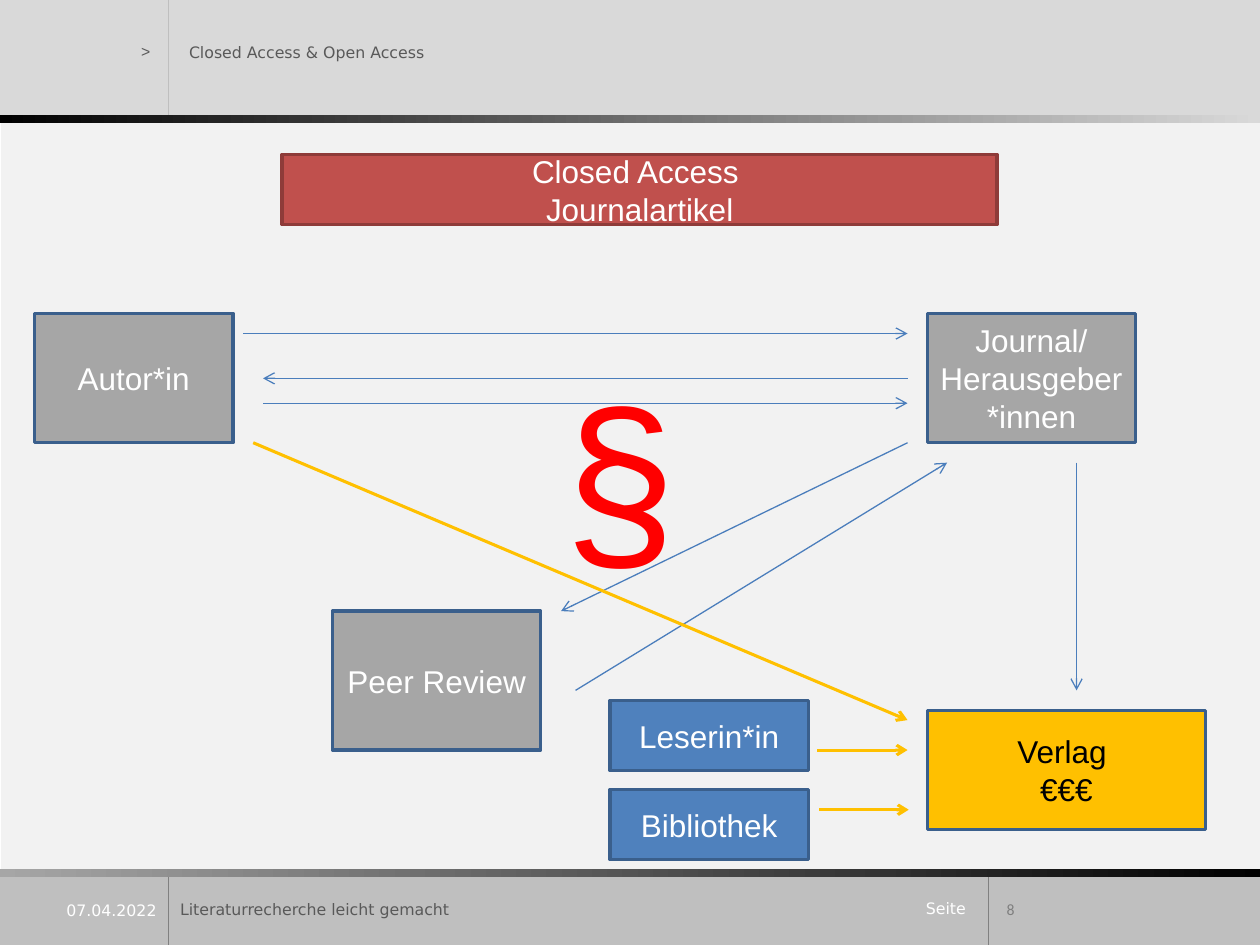
from lxml import etree
from pptx import Presentation
from pptx.dml.color import RGBColor
from pptx.enum.shapes import MSO_CONNECTOR, MSO_SHAPE
from pptx.enum.text import MSO_ANCHOR, MSO_AUTO_SIZE, PP_ALIGN
from pptx.oxml.ns import qn
from pptx.util import Pt

RECTANGLE = MSO_SHAPE.RECTANGLE
STRAIGHT = MSO_CONNECTOR.STRAIGHT
TOP, MIDDLE = MSO_ANCHOR.TOP, MSO_ANCHOR.MIDDLE
LEFT, CENTER, RIGHT = PP_ALIGN.LEFT, PP_ALIGN.CENTER, PP_ALIGN.RIGHT
NO_AUTOFIT = MSO_AUTO_SIZE.NONE

WIDTH, HEIGHT = 720, 540


def color(value):
    return RGBColor.from_string(value)


def points(*lengths):
    return [Pt(length) for length in lengths]


def set_text(shape, text, *, size, font, fill, align=LEFT, anchor=TOP, bullet=None, indent=0):
    """Write one paragraph per line of text; a vertical tab is a line break."""
    frame = shape.text_frame
    frame.word_wrap = True
    frame.auto_size = NO_AUTOFIT
    frame.vertical_anchor = anchor
    for number, line in enumerate(text.split("\n")):
        paragraph = frame.add_paragraph() if number else frame.paragraphs[0]
        paragraph.text = line
        paragraph.alignment = align
        if bullet:
            paragraph.space_before = Pt(0)
            properties = paragraph._p.get_or_add_pPr()
            properties.set("marL", str(Pt(indent)))
            properties.set("indent", str(-Pt(indent)))
            etree.SubElement(properties, qn("a:buChar")).set("char", bullet)
        for run in paragraph.runs:
            run.font.size = Pt(size)
            run.font.name = font
            run.font.color.rgb = color(fill)


class FlowSlide:
    box_font, box_size = "Arial", 18
    frame_font, frame_size = "DejaVu Sans", 9
    box_border, border_width = "3A5F8C", 2

    def __init__(self, presentation):
        self.slide = presentation.slides.add_slide(presentation.slide_layouts[1])
        self.shapes = self.slide.shapes

    def panel(self, left, top, width, height, fill):
        """A borderless band; a pair of colours gives a left-to-right gradient."""
        shape = self.shapes.add_shape(RECTANGLE, *points(left, top, width, height))
        shape.shadow.inherit = False
        shape.line.fill.background()
        if isinstance(fill, str):
            shape.fill.solid()
            shape.fill.fore_color.rgb = color(fill)
        else:
            shape.fill.gradient()
            shape.fill.gradient_angle = 0
            for position, (stop, value) in enumerate(zip(shape.fill.gradient_stops, fill)):
                stop.color.rgb = color(value)
                stop.position = position
        return shape

    def box(self, text, left, top, width, height, fill, border=box_border, text_color="FFFFFF"):
        shape = self.panel(left, top, width, height, fill)
        shape.line.color.rgb = color(border)
        shape.line.width = Pt(self.border_width)
        set_text(shape, text, size=self.box_size, font=self.box_font, fill=text_color,
                 align=CENTER, anchor=MIDDLE)

    def line(self, start, end, stroke, width, arrow=False):
        connector = self.shapes.add_connector(STRAIGHT, *points(*start, *end))
        connector.line.color.rgb = color(stroke)
        connector.line.width = Pt(width)
        if arrow:
            etree.SubElement(connector.line._get_or_add_ln(), qn("a:tailEnd")).set("type", "arrow")
        etree.SubElement(connector._element.spPr, qn("a:effectLst"))

    def label(self, text, left, top, width, height, fill, size=frame_size, font=frame_font, **style):
        shape = self.shapes.add_textbox(*points(left, top, width, height))
        set_text(shape, text, size=size, font=font, fill=fill, **style)

    def heading(self, text, left, top, width, height, fill):
        title, body = self.shapes.title, self.slide.placeholders[1]
        tree = body.element.getparent()
        tree.remove(title.element)
        tree.append(body.element)  # in front of the header band
        body.left, body.top, body.width, body.height = points(left, top, width, height)
        set_text(body, text, size=self.frame_size, font=self.frame_font, fill=fill,
                 bullet=">", indent=27.4)


def main():
    presentation = Presentation()
    presentation.slide_width, presentation.slide_height = points(WIDTH, HEIGHT)
    flow = FlowSlide(presentation)

    # Header, content area and footer
    header_bottom, footer_top, divider = 66.5, 499, 96.5
    flow.panel(0, 0, WIDTH, header_bottom, "D9D9D9")
    flow.panel(0.7, 67, WIDTH - 0.7, 430.5, "F2F2F2")
    flow.panel(0, footer_top, WIDTH, HEIGHT - footer_top, "BFBFBF")
    flow.line((divider, 0), (divider, header_bottom), "BFBFBF", 0.5)
    for x in (divider, 564.8):
        flow.line((x, footer_top), (x, HEIGHT), "808080", 0.5)
    flow.panel(0, 66, WIDTH, 4.5, ("000000", "D9D9D9"))
    flow.panel(0, 496.8, WIDTH, 4.5, ("A6A6A6", "000000"))

    # Header and footer text
    flow.heading("Closed Access & Open Access", 73.4, 20.9, 456.5, 54, "595959")
    flow.label("Seite", 522, 509.8, 41, 18, "FFFFFF")
    flow.label("8", 568.1, 505.4, 116, 28.8, "7F7F7F", font="Calibri", anchor=MIDDLE)
    flow.label("07.04.2022", 23.8, 506.2, 72.7, 28.1, "FFFFFF", align=RIGHT, anchor=MIDDLE)
    flow.label("Literaturrecherche leicht gemacht", 95.8, 505.4, 400.3, 28.8, "595959",
               anchor=MIDDLE)

    # Participants
    gray, blue, yellow = "A6A6A6", "4F81BD", "FFC000"
    journal_left, row_top, row_height = 529.9, 179, 74
    flow.box("Autor*in", 19.7, row_top, 113.5, row_height, gray)
    flow.box("Journal/ Herausgeber*innen", journal_left, row_top, 119, row_height, gray)
    flow.box("Peer Review", 190, 349.2, 119, 79.4, gray)
    flow.box("Verlag \v€€€", journal_left, 406, 159, 68, yellow, text_color="000000")
    flow.box("Closed Access \nJournalartikel", 161.3, 88.3, 408.5, 40, "C0504D", border="8E3B39")
    for text, top in (("Leserin*in", 400.3), ("Bibliothek", 451.2)):
        flow.box(text, 348.5, top, 113.5, 40, blue)

    # Manuscript and review flow
    right, row_bottom, below_journal, review_bottom = 518.6, 253, 264.4, 394.5
    for start, end in (
        ((139, 190.6), (right, 190.6)),
        ((right, 216.2), (150.3, 216.2)),
        ((150.3, 230.4), (right, 230.4)),
        ((right, row_bottom), (320.6, 349.2)),
        ((328.9, review_bottom), (541.2, below_journal)),
        ((615.2, below_journal), (615.2, review_bottom)),
    ):
        flow.line(start, end, "4B7EBC", 0.75, arrow=True)

    # Payments to the publisher
    for start, end in (
        ((144.7, row_bottom), (right, 411.5)),
        ((467, 428.6), (right, 428.6)),
        ((468, 462.7), (519.3, 462.7)),
    ):
        flow.line(start, end, yellow, 1.75, arrow=True)

    # Copyright sign
    flow.label("§", 201.6, 197.3, 306, 146.9, "FF0000", size=115, font="Arial", align=CENTER)

    presentation.save("out.pptx")


if __name__ == "__main__":
    main()
